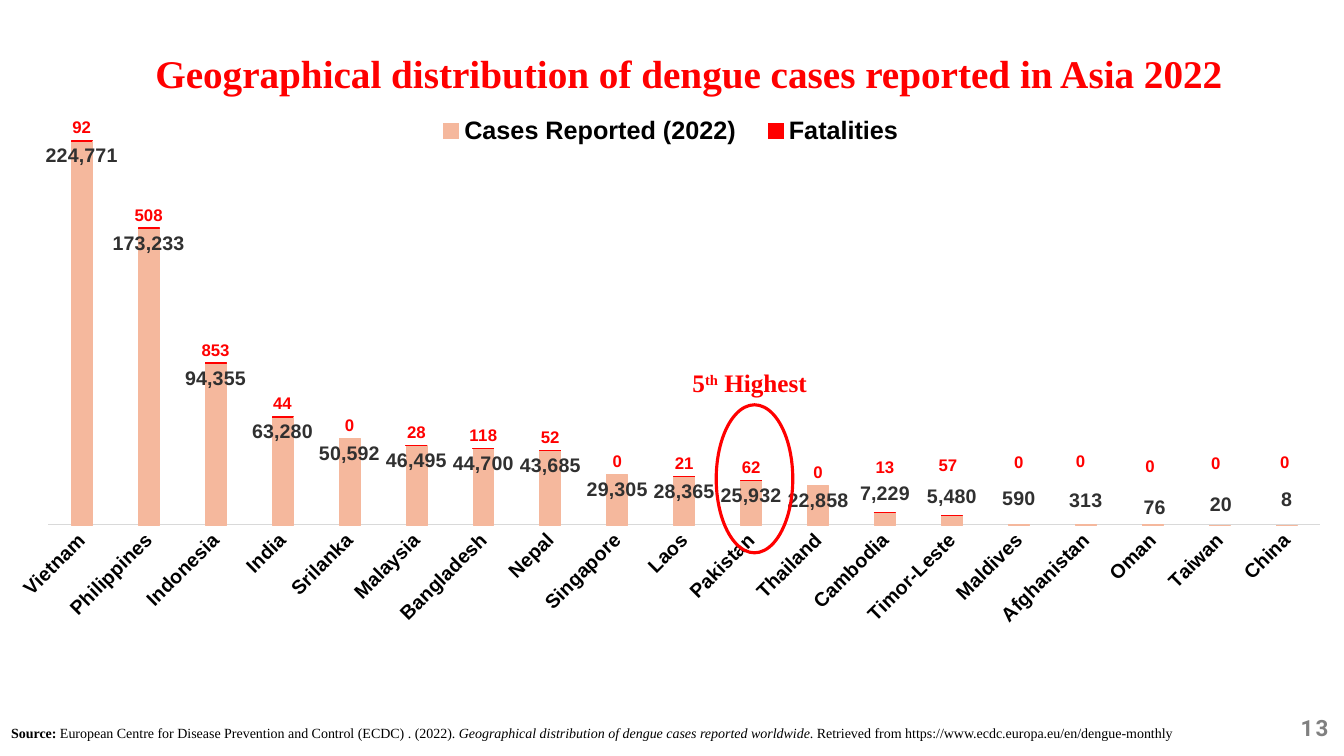
from dataclasses import dataclass
from typing import NamedTuple

from lxml import etree
from pptx import Presentation
from pptx.chart.data import CategoryChartData
from pptx.dml.color import RGBColor
from pptx.enum.chart import XL_CHART_TYPE, XL_LABEL_POSITION, XL_LEGEND_POSITION, XL_TICK_MARK
from pptx.enum.shapes import MSO_SHAPE
from pptx.enum.text import MSO_AUTO_SIZE, PP_ALIGN
from pptx.oxml.ns import qn
from pptx.util import Cm, Pt

STACKED = XL_CHART_TYPE.COLUMN_STACKED
INSIDE_END = XL_LABEL_POSITION.INSIDE_END
INSIDE_BASE = XL_LABEL_POSITION.INSIDE_BASE
LEGEND_BOTTOM = XL_LEGEND_POSITION.BOTTOM
NO_TICK = XL_TICK_MARK.NONE
OVAL = MSO_SHAPE.OVAL
FIT = MSO_AUTO_SIZE.SHAPE_TO_FIT_TEXT
LEFT, CENTER, RIGHT = PP_ALIGN.LEFT, PP_ALIGN.CENTER, PP_ALIGN.RIGHT

RED = RGBColor(0xFF, 0x00, 0x00)
PEACH = RGBColor(0xF5, 0xB8, 0x9D)
BLACK = RGBColor(0x00, 0x00, 0x00)
DARK = RGBColor(0x30, 0x30, 0x30)
GRAY = RGBColor(0x80, 0x80, 0x80)
PALE = RGBColor(0xD9, 0xD9, 0xD9)
SERIF, SANS, NUMBER = "Times New Roman", "Arial", "Roboto"
FIRST_MOVED = 12  # labels of the short columns are lifted from here on
NO_LEADERS = (
    '<c:extLst xmlns:c="http://schemas.openxmlformats.org/drawingml/2006/chart">'
    '<c:ext uri="{CE6537A1-D6FC-4f65-9D91-7224C49458BB}"'
    ' xmlns:c15="http://schemas.microsoft.com/office/drawing/2012/chart">'
    '<c15:showLeaderLines val="0"/></c:ext></c:extLst>'
)


class Country(NamedTuple):
    name: str
    cases: int
    deaths: int


class Span(NamedTuple):
    text: str
    bold: bool = True
    italic: bool = False
    baseline: int = 0
    spacing: int = 0


@dataclass
class Label:
    box: tuple[float, float, float, float]
    spans: list[Span]
    size: int
    color: RGBColor
    font: str = SERIF
    align: PP_ALIGN = LEFT
    wrap: bool = True


@dataclass
class SeriesStyle:
    color: RGBColor
    line: float
    label_color: RGBColor
    label_size: int
    position: XL_LABEL_POSITION
    moves: list[tuple[float, float]]  # percent of the chart's width and height


COUNTRIES = [
    Country("Vietnam", 224771, 92), Country("Philippines", 173233, 508),
    Country("Indonesia", 94355, 853), Country("India", 63280, 44),
    Country("Srilanka", 50592, 0), Country("Malaysia", 46495, 28),
    Country("Bangladesh", 44700, 118), Country("Nepal", 43685, 52),
    Country("Singapore", 29305, 0), Country("Laos", 28365, 21),
    Country("Pakistan", 25932, 62), Country("Thailand", 22858, 0),
    Country("Cambodia", 7229, 13), Country("Timor-Leste", 5480, 57),
    Country("Maldives", 590, 0), Country("Afghanistan", 313, 0),
    Country("Oman", 76, 0), Country("Taiwan", 20, 0), Country("China", 8, 0),
]
STYLES = [
    SeriesStyle(PEACH, 0.5, DARK, 14, INSIDE_END,
                [(0, -5.7), (0, -5.7), (0, -6.7), (0, -6.4), (0.15, -5.3), (0.1, -5.9), (0, -6.8)]),
    SeriesStyle(RED, 0.75, RED, 12, INSIDE_BASE,
                [(0, -5.4), (-0.3, -6.2), (0, -8), (-0.4, -8.3), (-0.2, -7.5), (-0.3, -8),
                 (-0.15, -8.2)]),
]
PAGE = Label((32.33, 17.88, 1.4, 0.94), [Span("13", spacing=150)], 16, GRAY, NUMBER, RIGHT, False)
TITLE = Label((1.8, 1.12, 31.12, 1.45),
              [Span("Geographical distribution of dengue cases reported in Asia 2022")],
              28, RED, align=CENTER)
RANK = Label((17.2, 9.14, 3.63, 1.02),
             [Span("5"), Span("th", baseline=30000), Span(" Highest")], 18, RED, wrap=False)
SOURCE = Label((0.03, 18.11, 33.55, 0.69), [
    Span("Source: "),
    Span("European Centre for Disease Prevention and Control (ECDC) . (2022). ", bold=False),
    Span("Geographical distribution of dengue cases reported worldwide", bold=False, italic=True),
    Span(". Retrieved from https://www.ecdc.europa.eu/en/dengue-monthly", bold=False),
], 10, BLACK)


def set_font(font, size: float, color: RGBColor, name: str, bold: bool = True) -> None:
    font.size, font.name, font.bold = Pt(size), name, bold
    font.color.rgb = color


def add_label(s, label: Label):
    sp = s.shapes.add_textbox(*map(Cm, label.box))
    tf = sp.text_frame
    tf.word_wrap, tf.auto_size = label.wrap, FIT
    p = tf.paragraphs[0]
    p.alignment = label.align
    for span in label.spans:
        r = p.add_run()
        r.text = span.text
        set_font(r.font, label.size, label.color, label.font, span.bold)
        r.font.italic = span.italic
        for key, value in (("baseline", span.baseline), ("spc", span.spacing)):
            if value:
                r.font._element.set(key, str(value))
    return p


def make_layout(inner: bool = False, **values: float):
    """Return a c:layout; x and y are offsets for labels, edges elsewhere."""
    layout = etree.Element(qn("c:layout"))
    manual = etree.SubElement(layout, qn("c:manualLayout"))
    if inner:
        etree.SubElement(manual, qn("c:layoutTarget")).set("val", "inner")
    if "w" in values:
        for mode in ("xMode", "yMode"):
            etree.SubElement(manual, qn(f"c:{mode}")).set("val", "edge")
    for key, value in values.items():
        etree.SubElement(manual, qn(f"c:{key}")).set("val", f"{value:g}")
    return layout


def place(parent, before: str, layout) -> None:
    """Put the layout into parent, ahead of the named child."""
    for old in parent.findall(qn("c:layout")):
        parent.remove(old)
    parent.find(qn(before)).addprevious(layout)


def hide_leader_lines(dlbls) -> None:
    for old in dlbls.findall(qn("c:showLeaderLines")):
        dlbls.remove(old)
    etree.SubElement(dlbls, qn("c:showLeaderLines")).set("val", "0")
    dlbls.append(etree.fromstring(NO_LEADERS))


def style_series(series, style: SeriesStyle) -> None:
    series.format.fill.solid()
    series.format.fill.fore_color.rgb = style.color
    series.format.line.color.rgb = style.color
    series.format.line.width = Pt(style.line)
    labels = series.data_labels
    labels.show_value = True
    labels.number_format, labels.number_format_is_linked = "#,##0", False
    labels.position = style.position
    set_font(labels.font, style.label_size, style.label_color, SANS)
    for i in range(FIRST_MOVED, len(COUNTRIES)):
        label = series.points[i].data_label
        set_font(label.font, style.label_size, style.label_color, SANS)
        label.position = style.position
    for dlbl, (dx, dy) in zip(labels._element.findall(qn("c:dLbl")), style.moves):
        place(dlbl, "c:txPr", make_layout(x=dx / 100, y=dy / 100))
    hide_leader_lines(labels._element)


def add_cases_chart(s) -> None:
    data = CategoryChartData(number_format="#,##0")
    data.categories = [c.name for c in COUNTRIES]
    data.add_series("Cases Reported (2022)", [c.cases for c in COUNTRIES])
    data.add_series("Fatalities", [c.deaths for c in COUNTRIES])
    box = map(Cm, (0.25, 2.01, 33.32, 15.06))
    chart = s.shapes.add_chart(STACKED, *box, data).chart
    set_font(chart.font, 14, BLACK, SANS)
    chart.has_title = False
    chart.has_legend = True
    chart.legend.position = LEGEND_BOTTOM
    chart.legend.include_in_layout = False
    set_font(chart.legend.font, 18, BLACK, SANS)
    place(chart.legend._element, "c:overlay", make_layout(x=0.31, y=0.05, w=0.38, h=0.07))

    plot = chart.plots[0]
    plot.gap_width, plot.overlap, plot.vary_by_categories = 219, 100, False
    for series, style in zip(plot.series, STYLES):
        style_series(series, style)
    place(plot._element.getparent(), "c:barChart",
          make_layout(True, x=0.029, y=0.03, w=0.962, h=0.715))

    values = chart.value_axis
    values.minimum_scale, values.maximum_scale = 0, 250000
    values.has_major_gridlines = values.visible = False
    names = chart.category_axis
    names.major_tick_mark = names.minor_tick_mark = NO_TICK
    names.format.line.color.rgb = PALE
    names.format.line.width = Pt(0.75)
    set_font(names.tick_labels.font, 14, BLACK, SANS)
    names._element.find(qn("c:txPr")).find(qn("a:bodyPr")).set("rot", "-2700000")


def add_highlight(s) -> None:
    sp = s.shapes.add_shape(OVAL, *map(Cm, (17.15, 11.1, 3.73, 1.93)))
    sp.rotation = 270
    sp.shadow.inherit = False
    sp.fill.background()
    sp.line.color.rgb = RED
    sp.line.width = Pt(2.25)


def main() -> None:
    prs = Presentation()
    prs.slide_width, prs.slide_height = Cm(33.87), Cm(19.05)
    s = prs.slides.add_slide(prs.slide_layouts[6])
    add_label(s, PAGE)
    add_cases_chart(s)
    add_label(s, TITLE)
    add_highlight(s)
    add_label(s, RANK)
    p = add_label(s, SOURCE)
    p.line_spacing, p.space_after = 1.07, Pt(8)
    p._p.get_or_add_pPr().set("marL", str(Cm(1.27)))
    p._p.get_or_add_pPr().set("indent", str(-Cm(1.27)))
    prs.save("out.pptx")


if __name__ == "__main__":
    main()
